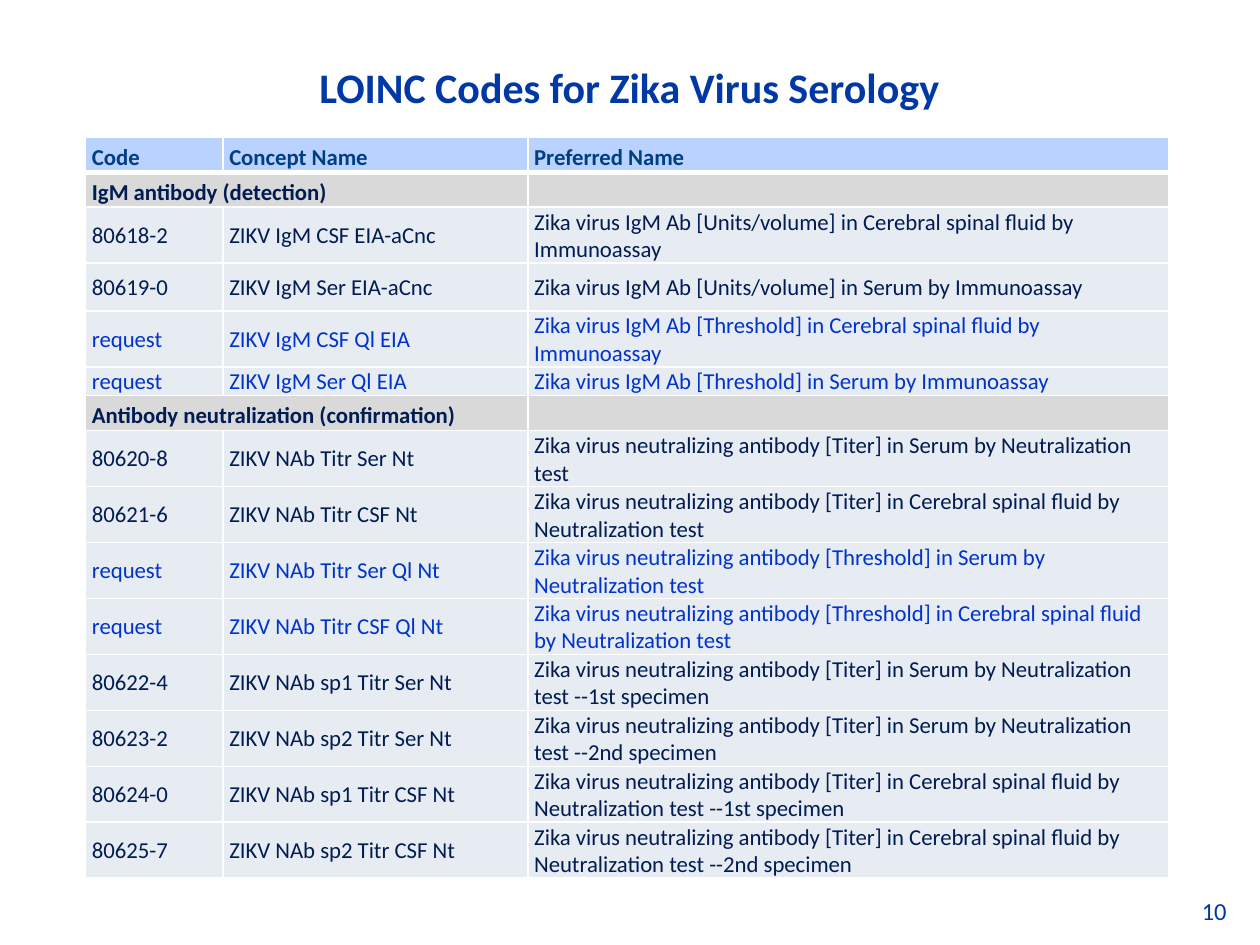
from pptx import Presentation
from pptx.dml.color import RGBColor
from pptx.enum.text import MSO_ANCHOR, PP_ALIGN
from pptx.oxml.xmlchemy import OxmlElement
from pptx.util import Pt

MIDDLE = MSO_ANCHOR.MIDDLE
LEFT, CENTER = PP_ALIGN.LEFT, PP_ALIGN.CENTER

TITLE_BLUE = RGBColor(0x00, 0x39, 0xA6)
HEADER_BLUE = RGBColor(0x00, 0x3F, 0x82)
NAVY = RGBColor(0x00, 0x1C, 0x53)
REQUEST_BLUE = RGBColor(0x00, 0x33, 0xCC)
HEADER_FILL = RGBColor(0xBA, 0xD2, 0xFF)
SECTION_FILL = RGBColor(0xD9, 0xD9, 0xD9)
ROW_FILL = RGBColor(0xE7, 0xEC, 0xF2)
WHITE = RGBColor(0xFF, 0xFF, 0xFF)

FONT = "Calibri"
TABLE_SIZE = 13
TITLE = "LOINC Codes for Zika Virus Serology"
PAGE_NUMBER = "10"
HEADINGS = ("Code", "Concept Name", "Preferred Name")
IGM = "Zika virus IgM Ab"
NAB = "Zika virus neutralizing antibody"
CSF = "in Cerebral spinal fluid by"
SERUM = "in Serum by"
NT = "Neutralization test"
SECTIONS = [
    ("IgM antibody (detection)", [
        ("80618-2", "ZIKV IgM CSF EIA-aCnc", f"{IGM} [Units/volume] {CSF} Immunoassay"),
        ("80619-0", "ZIKV IgM Ser EIA-aCnc", f"{IGM} [Units/volume] {SERUM} Immunoassay"),
        ("request", "ZIKV IgM CSF Ql EIA", f"{IGM} [Threshold] {CSF} Immunoassay"),
        ("request", "ZIKV IgM Ser Ql EIA", f"{IGM} [Threshold] {SERUM} Immunoassay"),
    ]),
    ("Antibody neutralization (confirmation)", [
        ("80620-8", "ZIKV NAb Titr Ser Nt", f"{NAB} [Titer] {SERUM} {NT}"),
        ("80621-6", "ZIKV NAb Titr CSF Nt", f"{NAB} [Titer] {CSF} {NT}"),
        ("request", "ZIKV NAb Titr Ser Ql Nt", f"{NAB} [Threshold] {SERUM} {NT}"),
        ("request", "ZIKV NAb Titr CSF Ql Nt", f"{NAB} [Threshold] {CSF} {NT}"),
        ("80622-4", "ZIKV NAb sp1 Titr Ser Nt", f"{NAB} [Titer] {SERUM} {NT} --1st specimen"),
        ("80623-2", "ZIKV NAb sp2 Titr Ser Nt", f"{NAB} [Titer] {SERUM} {NT} --2nd specimen"),
        ("80624-0", "ZIKV NAb sp1 Titr CSF Nt", f"{NAB} [Titer] {CSF} {NT} --1st specimen"),
        ("80625-7", "ZIKV NAb sp2 Titr CSF Nt", f"{NAB} [Titer] {CSF} {NT} --2nd specimen"),
    ]),
]
COLUMN_WIDTHS = (78.48, 174.24, 366.48)
SHORT_ROW, TALL_ROW = 13.68, 27.36
TABLE_HEIGHT = 420.48
SHORT_CODES = ("ZIKV IgM Ser Ql EIA",)


def write(frame, text, *, size, color, bold=False, align=LEFT):
    paragraph = frame.paragraphs[0]
    paragraph.alignment = align
    if not text:
        ending = OxmlElement("a:endParaRPr")
        ending.set("sz", str(size * 100))
        paragraph._p.append(ending)
        return
    run = paragraph.add_run()
    run.text = text
    run.font.name = FONT
    run.font.size = Pt(size)
    run.font.bold = bold
    run.font.color.rgb = color


def add_label(slide, box, text, wrap=True, **text_format):
    label = slide.shapes.add_textbox(*(Pt(length) for length in box))
    label.text_frame.word_wrap = wrap
    label.text_frame.vertical_anchor = MIDDLE
    write(label.text_frame, text, **text_format)


def set_borders(cell, top, bottom):
    properties = cell._tc.get_or_add_tcPr()
    for position, (side, width) in enumerate((("L", 1), ("R", 1), ("T", top), ("B", bottom))):
        line = OxmlElement(f"a:ln{side}")
        line.set("w", str(Pt(width)))
        fill = OxmlElement("a:solidFill")
        color = OxmlElement("a:srgbClr")
        color.set("val", str(WHITE))
        fill.append(color)
        line.append(fill)
        properties.insert(position, line)


def fill_row(table, index, texts, *, fill, color, bold, margins, height):
    table.rows[index].height = Pt(height)
    for column, text in enumerate(texts):
        cell = table.cell(index, column)
        cell.fill.solid()
        cell.fill.fore_color.rgb = fill
        cell.vertical_anchor = MIDDLE
        cell.margin_left = cell.margin_right = Pt(3.6)
        cell.margin_top, cell.margin_bottom = (Pt(margin) for margin in margins)
        set_borders(cell, top=3 if index == 1 else 1, bottom=3 if index == 0 else 1)
        write(cell.text_frame, text, size=TABLE_SIZE, color=color, bold=bold)


def add_codes_table(slide):
    row_count = 1 + sum(1 + len(tests) for _, tests in SECTIONS)
    frame = slide.shapes.add_table(row_count, len(HEADINGS), Pt(48.96), Pt(78.48),
                                   Pt(sum(COLUMN_WIDTHS)), Pt(TABLE_HEIGHT))
    table = frame.table
    for column, width in zip(table.columns, COLUMN_WIDTHS):
        column.width = Pt(width)
    heading_format = dict(bold=True, margins=(3.6, 0.72), height=SHORT_ROW)
    fill_row(table, 0, HEADINGS, fill=HEADER_FILL, color=HEADER_BLUE, **heading_format)
    index = 1
    for section, tests in SECTIONS:
        fill_row(table, index, (section, "", ""), fill=SECTION_FILL, color=NAVY, **heading_format)
        table.cell(index, 0).merge(table.cell(index, 1))
        for index, test in enumerate(tests, index + 1):
            fill_row(table, index, test, fill=ROW_FILL, bold=False, margins=(0.72, 0),
                     color=REQUEST_BLUE if test[0] == "request" else NAVY,
                     height=SHORT_ROW if test[1] in SHORT_CODES else TALL_ROW)
        index += 1
    frame.height = Pt(TABLE_HEIGHT)


def main():
    deck = Presentation()
    deck.slide_width, deck.slide_height = Pt(720), Pt(540)
    slide = deck.slides.add_slide(deck.slide_layouts[6])
    add_label(slide, (679.68, 508.32, 30.96, 24.48), PAGE_NUMBER, wrap=False,
              size=14, color=TITLE_BLUE)
    add_label(slide, (35.28, 23.04, 648.72, 53.28), TITLE,
              size=24, color=TITLE_BLUE, bold=True, align=CENTER)
    add_codes_table(slide)
    deck.save("out.pptx")


if __name__ == "__main__":
    main()
